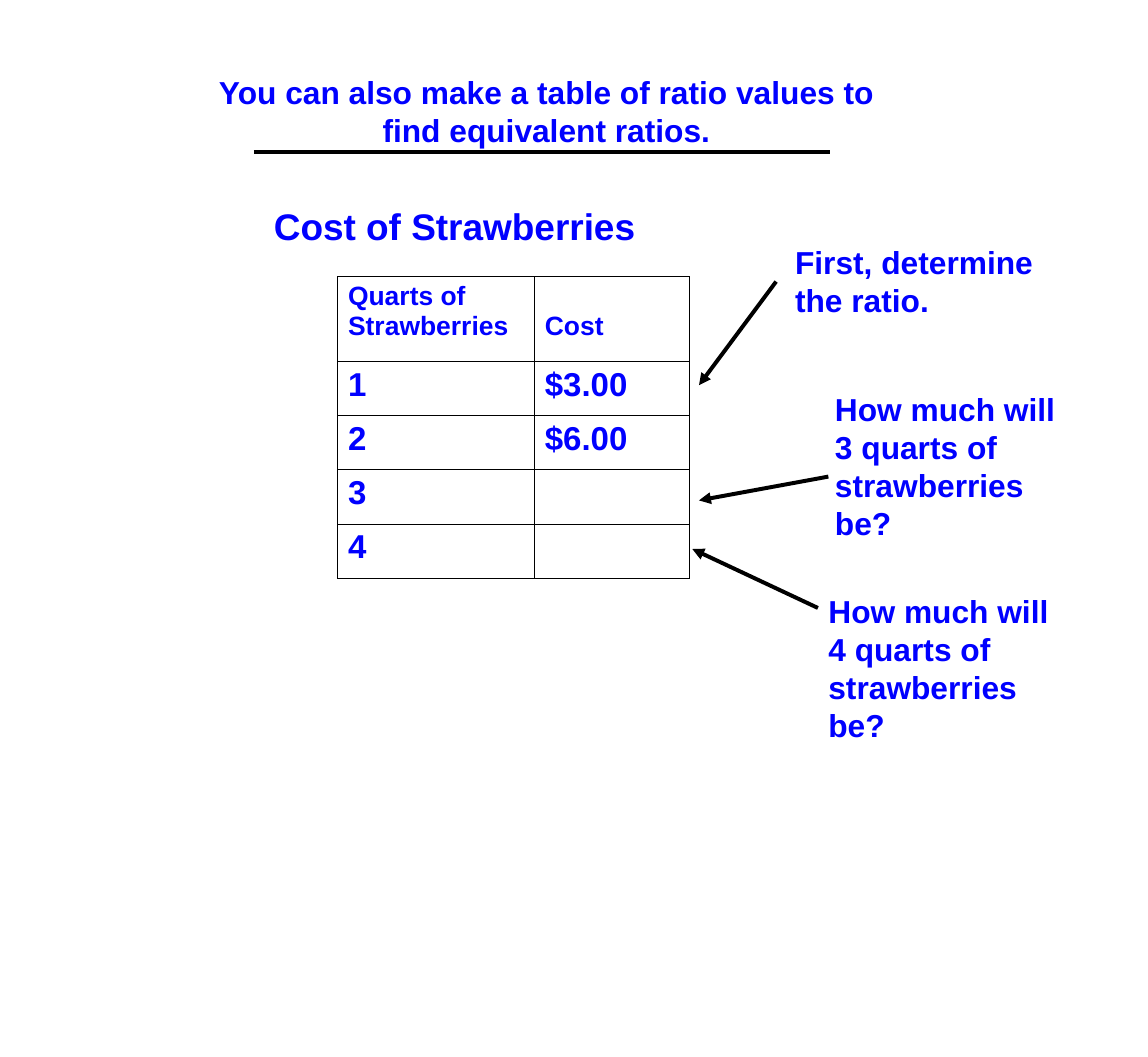
from lxml import etree
from pptx import Presentation
from pptx import util as u
from pptx.dml.color import RGBColor
from pptx.enum import shapes, text
from pptx.oxml.ns import qn

W, H = 12.07, 11.11
BLUE, BLACK, WHITE = "0000FF", "000000", "FFFFFF"
MARGINS = {"margin_left": u.Inches(0.11), "margin_right": u.Inches(0.11),
           "margin_top": u.Inches(0.05), "margin_bottom": u.Inches(0.05)}
ROWS = [("Quarts of Strawberries", "Cost"),
        ("1", "$3.00"), ("2", "$6.00"), ("3", ""), ("4", "")]
COL_WIDTHS = (17.15, 13.5)
HEAD_ROW, BODY_ROW = 8.01, 5.13

# Callout text, its box, and the arrow leading to the table
CALLOUTS = [
    ("First, determine the ratio.", (68.35, 22.5, 25.6, 8.19),
     (67.61, 26.64, 60.89, 36.45)),
    ("How much will 3 quarts of strawberries be?", (71.83, 36.45, 23.03, 15.48),
     (72.16, 45.09, 60.89, 47.34)),
    ("How much will 4 quarts of strawberries be?", (71.25, 55.54, 23.03, 15.48),
     (71.25, 57.52, 60.31, 51.94)),
]


def color(value):
    return RGBColor.from_string(value)


def across(percent):
    return u.Inches(W * percent / 100)


def down(percent):
    return u.Inches(H * percent / 100)


def place(a, b, c, d):
    """Two x, y pairs in percent of the slide, as lengths."""
    return across(a), down(b), across(c), down(d)


def set_all(obj, values):
    for name, value in values.items():
        setattr(obj, name, value)


def write(p, words, size):
    r = p.add_run()
    r.text = words
    set_all(r.font, {"name": "Arial", "size": u.Pt(size), "bold": True})
    r.font.color.rgb = color(BLUE)


def add_text(s, words, box, size=24, align=text.PP_ALIGN.LEFT):
    tf = s.shapes.add_textbox(*place(*box)).text_frame
    set_all(tf, {**MARGINS, "word_wrap": True,
                 "auto_size": text.MSO_AUTO_SIZE.SHAPE_TO_FIT_TEXT})
    tf.paragraphs[0].alignment = align
    write(tf.paragraphs[0], words, size)


def add_line(s, ends, arrow=False):
    sp = s.shapes.add_connector(shapes.MSO_CONNECTOR.STRAIGHT, *place(*ends))
    sp.line.color.rgb = color(BLACK)
    sp.line.width = u.Pt(3)
    if arrow:
        etree.SubElement(sp.line._get_or_add_ln(), qn("a:tailEnd"), type="triangle")
    etree.SubElement(sp._element.spPr, qn("a:effectLst"))


def add_borders(cell):
    tc_pr = cell._tc.get_or_add_tcPr()
    for i, side in enumerate(("lnL", "lnR", "lnT", "lnB")):
        ln = etree.Element(qn("a:" + side), w=str(u.Pt(1)))
        fill = etree.SubElement(ln, qn("a:solidFill"))
        etree.SubElement(fill, qn("a:srgbClr"), val=BLACK)
        tc_pr.insert(i, ln)


def add_cost_table(s, left, top):
    heights = [HEAD_ROW] + [BODY_ROW] * (len(ROWS) - 1)
    table = s.shapes.add_table(len(ROWS), len(COL_WIDTHS), *place(
        left, top, sum(COL_WIDTHS), sum(heights))).table
    set_all(table, {"first_row": False, "horz_banding": False})
    for col, width in zip(table.columns, COL_WIDTHS):
        col.width = across(width)
    for i, (row, height, values) in enumerate(zip(table.rows, heights, ROWS)):
        row.height = down(height)
        for cell, value in zip(row.cells, values):
            set_all(cell, MARGINS)
            cell.fill.solid()
            cell.fill.fore_color.rgb = color(WHITE)
            add_borders(cell)
            if value:
                write(cell.text_frame.paragraphs[0], value, 25 if i else 20)
    # "Cost" sits level with the second line of its neighbour
    table.cell(0, 1).margin_top = u.Inches(0.36)


def main():
    prs = Presentation()
    set_all(prs, {"slide_width": u.Inches(W), "slide_height": u.Inches(H)})
    s = prs.slides.add_slide(prs.slide_layouts[6])

    # Title and its rule
    add_text(s, "You can also make a table of ratio values to find equivalent ratios.",
             (16.98, 6.48, 61.23, 8.19), align=text.PP_ALIGN.CENTER)
    add_line(s, (22.12, 14.4, 72.33, 14.4))

    # Table with heading
    add_text(s, "Cost of Strawberries", (22.95, 18.81, 38.77, 5.22), size=28)
    add_cost_table(s, 29.41, 26.19)

    # Callouts
    for words, box, ends in CALLOUTS:
        add_text(s, words, box)
        add_line(s, ends, arrow=True)

    prs.save("out.pptx")


if __name__ == "__main__":
    main()
